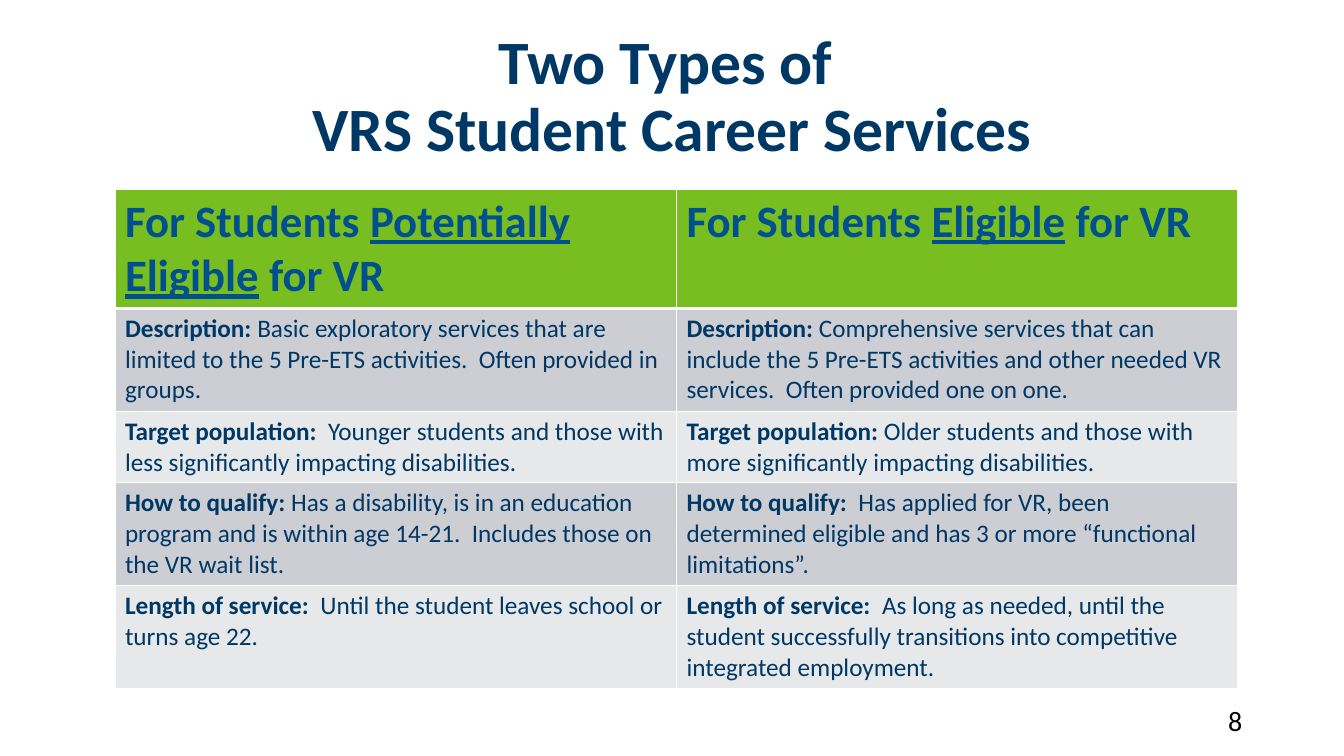
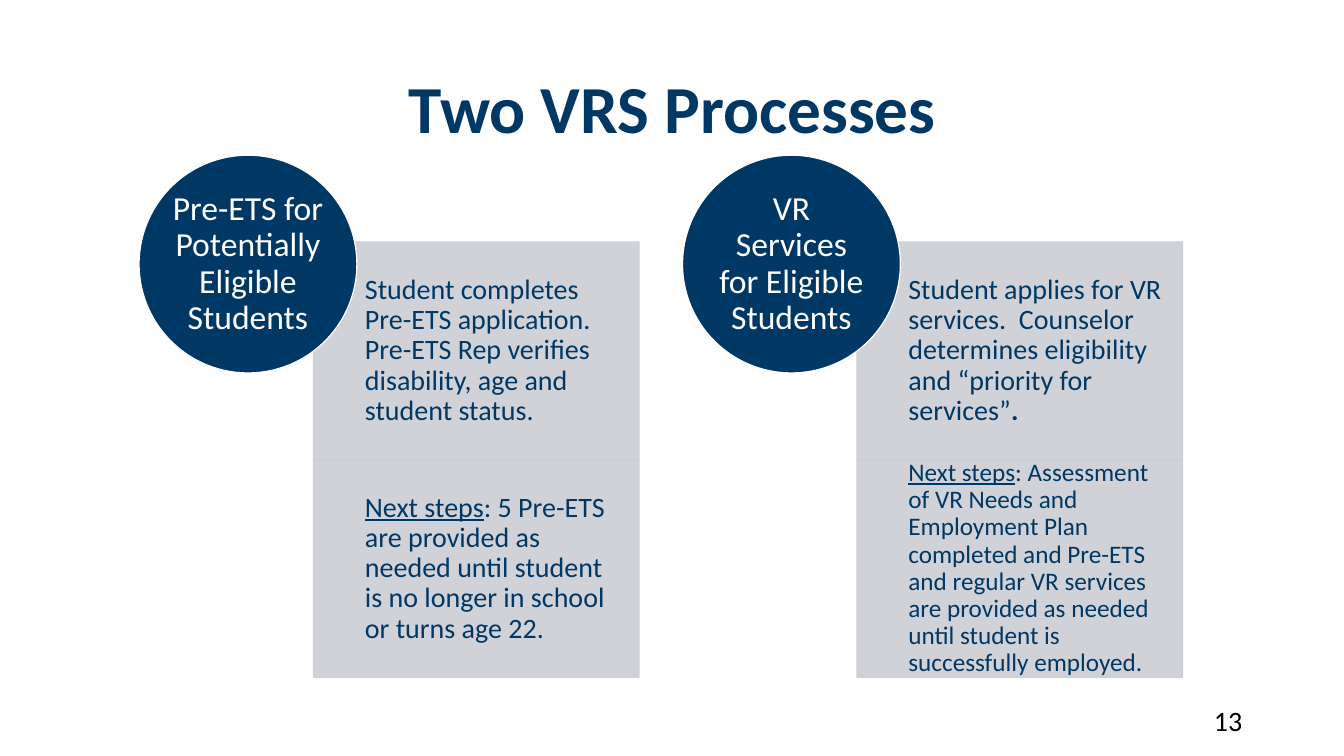
"""Build two slides comparing the VRS student service tracks."""
import lxml.etree
import pptx
import pptx.dml.color
import pptx.enum.shapes
import pptx.enum.text
import pptx.oxml.ns
import pptx.util

INCH = pptx.util.Inches
ALIGN = pptx.enum.text.PP_ALIGN
ANCHOR = pptx.enum.text.MSO_ANCHOR
SHAPE = pptx.enum.shapes.MSO_SHAPE
QN = pptx.oxml.ns.qn
WIDTH, HEIGHT = 13.33, 7.5
FONT = "Calibri"
COLORS = {
    "navy": "003865", "blue": "004F8E", "green": "78BE21", "gray": "CCCED3",
    "pale": "E7E8EA", "white": "FFFFFF", "black": "000000",
}


def rgb(name):
    return pptx.dml.color.RGBColor.from_string(COLORS[name])


def write(frame, runs, size, color, align=ALIGN.LEFT, anchor=ANCHOR.MIDDLE,
          spacing=None, insets=(0.1, 0.05, 0.1, 0.05)):
    frame.word_wrap = True
    frame.vertical_anchor = anchor
    frame.margin_left, frame.margin_top, frame.margin_right, frame.margin_bottom = map(INCH, insets)
    paragraph = frame.paragraphs[0]
    paragraph.alignment = align
    if spacing:
        paragraph.line_spacing = spacing
    for text, style in runs:
        if text == "\n":
            paragraph.add_line_break()
            continue
        run = paragraph.add_run()
        run.text = text
        run.font.name = FONT
        run.font.size = pptx.util.Pt(size)
        run.font.color.rgb = rgb(color)
        run.font.bold = "b" in style
        run.font.underline = "u" in style


deck = pptx.Presentation()
deck.slide_width, deck.slide_height = INCH(WIDTH), INCH(HEIGHT)

pages = [
    ([("Two Types of ", "b"), ("\n", ""), ("VRS Student Career Services", "b")],
     44, (1.42, 0.26, 10.5, 1.43), ANCHOR.MIDDLE, "8"),
    ([("Two VRS Processes", "b")], 48, (1.17, 0.7, 11, 1.5), ANCHOR.TOP, "13"),
]
slides = []
for heading, size, area, anchor, number in pages:
    slide = deck.slides.add_slide(deck.slide_layouts[6])
    title = slide.shapes.add_textbox(*map(INCH, area))
    write(title.text_frame, heading, size, "navy", ALIGN.CENTER, anchor, 0.9)
    page_number = slide.shapes.add_textbox(*map(INCH, (10.82, 6.95, 1.6, 0.4)))
    write(page_number.text_frame, [(number, "")], 20, "black", ALIGN.RIGHT)
    slides.append(slide)
types_slide, processes_slide = slides

service_rows = [
    [[("For Students ", "b"), ("Potentially Eligible", "bu"), (" for VR", "b")],
     [("For Students ", "b"), ("Eligible", "bu"), (" for VR", "b")]],
    [[("Description: ", "b"),
      ("Basic exploratory services that are limited to the 5 Pre-ETS activities.  "
       "Often provided in groups.", "")],
     [("Description: ", "b"),
      ("Comprehensive services that can include the 5 Pre-ETS activities and other "
       "needed VR services.  Often provided one on one.", "")]],
    [[("Target population:  ", "b"),
      ("Younger students and those with less significantly impacting disabilities.", "")],
     [("Target population: ", "b"),
      ("Older students and those with more significantly impacting disabilities.", "")]],
    [[("How to qualify: ", "b"),
      ("Has a disability, is in an education program and is within age 14-21.  "
       "Includes those on the VR wait list.", "")],
     [("How to qualify:  ", "b"),
      ("Has applied for VR, been determined eligible and has 3 or more "
       "“functional limitations”.", "")]],
    [[("Length of service:  ", "b"),
      ("Until the student leaves school or turns age 22.", "")],
     [("Length of service:  ", "b"),
      ("As long as needed, until the student successfully transitions into "
       "competitive integrated employment.", "")]],
]
row_heights = [1.18, 1.02, 0.71, 1.02, 1.02]
column_width = 5.57
services = types_slide.shapes.add_table(
    len(service_rows), 2, INCH(1.14), INCH(1.88),
    INCH(2 * column_width), INCH(sum(row_heights))).table
for column in services.columns:
    column.width = INCH(column_width)
for r, (row, height) in enumerate(zip(service_rows, row_heights)):
    services.rows[r].height = INCH(height)
    header = r == 0
    for c, runs in enumerate(row):
        cell = services.cell(r, c)
        write(cell.text_frame, runs, 32 if header else 18, "blue" if header else "navy")
        cell.vertical_anchor = ANCHOR.TOP
        cell.fill.solid()
        cell.fill.fore_color.rgb = rgb("green" if header else ("pale", "gray")[r % 2])
        properties = cell.fill._xPr
        for position, side in enumerate(("lnL", "lnR", "lnT", "lnB")):
            thick = (r, side) in ((0, "lnB"), (1, "lnT"))
            border = lxml.etree.Element(QN("a:" + side), w=str(pptx.util.Pt(3 if thick else 1)))
            paint = lxml.etree.SubElement(border, QN("a:solidFill"))
            lxml.etree.SubElement(paint, QN("a:srgbClr"), val=COLORS["white"])
            properties.insert(position, border)

processes = [
    ("Pre-ETS for Potentially Eligible Students", [
        (20, 0.16, [("Student completes Pre-ETS application. Pre-ETS Rep verifies "
                     "disability, age and student status.", "")]),
        (20, 0.16, [("Next steps", "u"),
                    (": 5 Pre-ETS are provided as needed until student is no longer "
                     "in school or turns age 22.", "")]),
    ]),
    ("VR Services for Eligible Students", [
        (20, 0.16, [("Student applies for VR services.  Counselor determines "
                     "eligibility and “priority for services”", ""), (".", "b")]),
        (18, 0.14, [("Next steps", "u"),
                    (": Assessment of VR Needs and Employment Plan completed and "
                     "Pre-ETS and regular VR services are provided as needed until "
                     "student is successfully employed.", "")]),
    ]),
]
circle_left, circle_top, module = 1.38, 1.54, 2.16
process_pitch = 5.39
step_offset, step_top, step_width, step_indent = 1.73, 2.4, 3.23, 0.51
for p, (audience, steps) in enumerate(processes):
    left = circle_left + p * process_pitch
    parts = [
        (SHAPE.RECTANGLE, left + step_offset, step_top + s * module, step_width, runs, size,
         "gray", "gray", "navy", ALIGN.LEFT, (step_indent, inset, inset, inset), 90)
        for s, (size, inset, runs) in enumerate(steps)
    ]
    parts.append((SHAPE.OVAL, left, circle_top, module, [(audience, "")], 24,
                  "navy", "white", "white", ALIGN.CENTER, (0, 0, 0, 0), 100))
    for kind, x, y, width, runs, size, fill, line, ink, align, insets, opacity in parts:
        part = processes_slide.shapes.add_shape(
            kind, INCH(x), INCH(y), INCH(width), INCH(module))
        part.shadow.inherit = False
        part.fill.solid()
        part.fill.fore_color.rgb = rgb(fill)
        part.line.color.rgb = rgb(line)
        part.line.width = pptx.util.Pt(0.85)
        if opacity < 100:
            for tint in part._element.spPr.iter(QN("a:srgbClr")):
                lxml.etree.SubElement(tint, QN("a:alpha"), val=str(opacity * 1000))
        write(part.text_frame, runs, size, ink, align, spacing=0.9, insets=insets)

deck.save("out.pptx")
